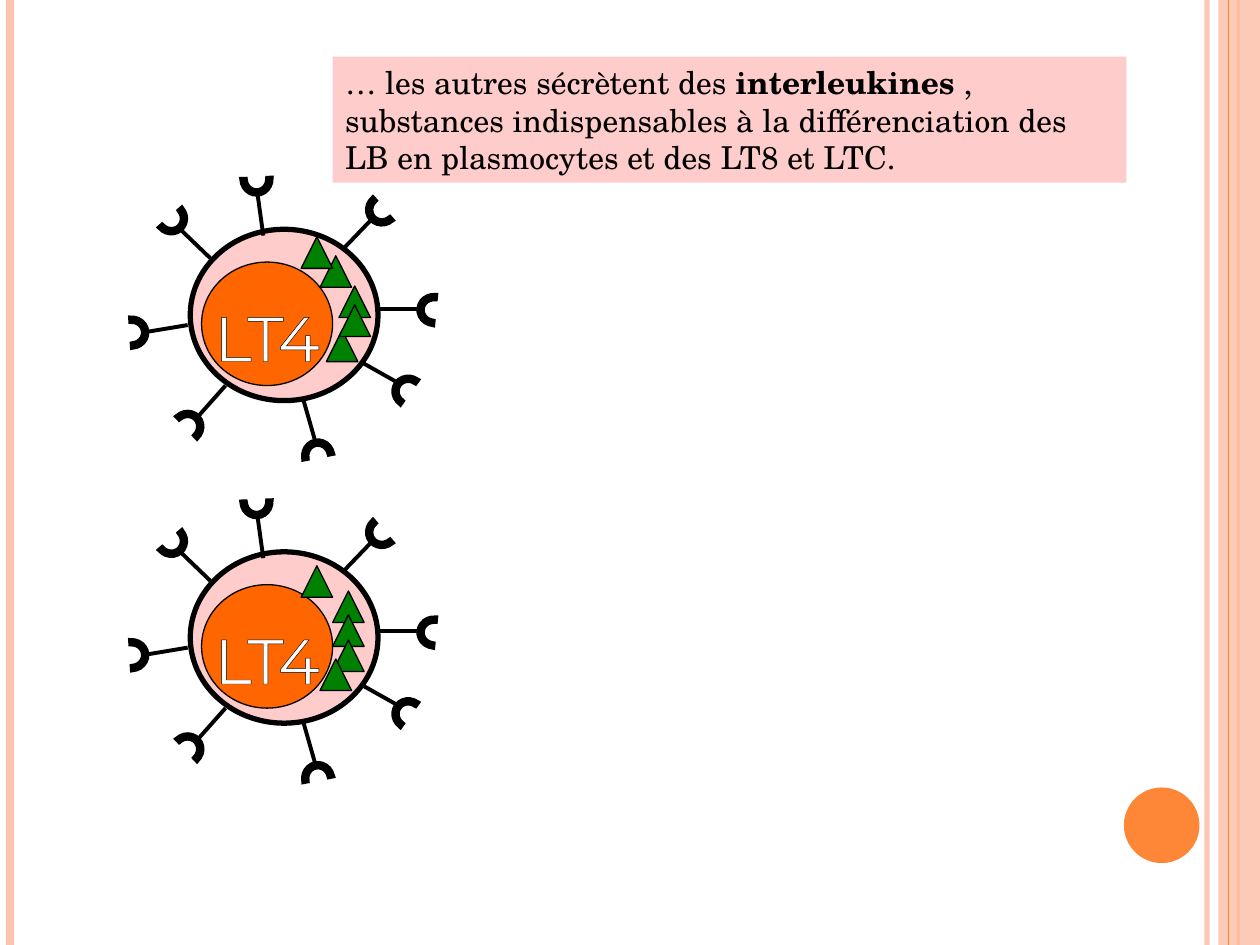
from lxml import etree
from pptx import Presentation
from pptx.dml.color import RGBColor
from pptx.enum.shapes import MSO_CONNECTOR, MSO_SHAPE
from pptx.enum.text import MSO_ANCHOR, PP_ALIGN
from pptx.oxml import parse_xml
from pptx.oxml.ns import nsdecls, qn
from pptx.util import Inches, Pt

PEACH, ORANGE = "FEC3AE", "FE8637"
PINK, NUCLEUS, GREEN = "FFCCCC", "FF6600", "008000"
BLACK, WHITE = "000000", "FFFFFF"
BODY_FONT, LABEL_FONT = "TeX Gyre Schola", "Montserrat"

# Stem start, stem end, top left of the receptor cup, rotation of the cup
RECEPTORS = [
    ((2.09, 1.87), (2.04, 1.51), (1.92, 1.30), 177.6),
    ((1.67, 2.05), (1.41, 1.80), (1.24, 1.61), 139.2),
    ((1.49, 2.58), (1.13, 2.64), (0.93, 2.52), 86.4),
    ((1.79, 3.06), (1.55, 3.33), (1.37, 3.27), 46.8),
    ((2.86, 2.87), (3.18, 3.05), (3.13, 2.99), 305.9),
    ((2.41, 3.18), (2.51, 3.53), (2.41, 3.50), 349),
    ((2.99, 2.45), (3.36, 2.45), (3.33, 2.34), 275.7),
    ((2.72, 1.98), (2.97, 1.72), (2.92, 1.54), 229.2),
]
CELL_OFFSETS = [0, 2.56]
INTERLEUKINS = [
    (2.54, 2.03), (2.69, 2.27), (2.59, 2.62), (2.39, 4.49), (2.64, 4.69),
    (2.64, 4.88), (2.64, 5.08), (2.54, 5.23), (2.69, 2.42), (2.39, 1.88),
]


def color(value):
    return RGBColor.from_string(value)


def set_opacity(fill_parent, percent):
    """Make the solid fill found below the element partly transparent."""
    color_element = fill_parent.find(".//" + qn("a:srgbClr"))
    alpha = etree.SubElement(color_element, qn("a:alpha"))
    alpha.set("val", str(percent * 1000))


class SlideBuilder:
    def __init__(self, slide):
        self.slide = slide
        self.shapes = slide.shapes

    def shape(self, kind, left, top, width, height, fill=None, line=None, weight=0.75):
        shape = self.shapes.add_shape(
            kind, Inches(left), Inches(top), Inches(width), Inches(height))
        shape.shadow.inherit = False
        if fill:
            shape.fill.solid()
            shape.fill.fore_color.rgb = color(fill)
        else:
            shape.fill.background()
        if line:
            shape.line.color.rgb = color(line)
            shape.line.width = Pt(weight)
        else:
            shape.line.fill.background()
        return shape

    def line(self, start, end, line_color, weight):
        connector = self.shapes.add_connector(
            MSO_CONNECTOR.STRAIGHT, *(Inches(value) for value in start + end))
        connector.line.color.rgb = color(line_color)
        connector.line.width = Pt(weight)
        etree.SubElement(connector._element.spPr, qn("a:effectLst"))
        return connector

    def vertical_line(self, x, line_color, weight):
        return self.line((x, 0), (x, 7.5), line_color, weight)

    def text(self, left, top, width, height, runs, font, size, text_color):
        """Add a text box with one paragraph of (text, bold) runs."""
        box = self.shapes.add_textbox(
            Inches(left), Inches(top), Inches(width), Inches(height))
        frame = box.text_frame
        frame.word_wrap = True
        frame.vertical_anchor = MSO_ANCHOR.TOP
        paragraph = frame.paragraphs[0]
        paragraph.font.name = font
        paragraph.font.size = Pt(size)
        paragraph.font.color.rgb = color(text_color)
        for content, bold in runs:
            run = paragraph.add_run()
            run.text = content
            run.font.bold = bold
        return box

    def outlined_label(self, left, top, width, height, content):
        box = self.text(left, top, width, height, [(content, None)],
                        LABEL_FONT, 36, WHITE)
        frame = box.text_frame
        frame.margin_left = frame.margin_right = 0
        paragraph = frame.paragraphs[0]
        paragraph.alignment = PP_ALIGN.CENTER
        outline = parse_xml(
            f'<a:ln {nsdecls("a")} w="{Pt(0.75)}"><a:solidFill>'
            f'<a:srgbClr val="{BLACK}"/></a:solidFill></a:ln>')
        paragraph.runs[0]._r.get_or_add_rPr().insert(0, outline)

    def receptor(self, start, end, corner, rotation, offset):
        self.line((start[0], start[1] + offset), (end[0], end[1] + offset), BLACK, 2.25)
        cup = self.shape(MSO_SHAPE.BLOCK_ARC, corner[0], corner[1] + offset,
                         0.23, 0.24, line=BLACK, weight=3)
        cup.adjustments[2] = 0.11
        cup.rotation = rotation
        miter = etree.SubElement(cup._element.spPr.find(qn("a:ln")), qn("a:miter"))
        miter.set("lim", "800000")

    def cell(self, offset):
        """Add one grouped LT4 cell, moved down by the offset."""
        self.shapes = self.slide.shapes.add_group_shape().shapes
        self.shape(MSO_SHAPE.OVAL, 1.51, 1.82 + offset, 1.49, 1.36, PINK, BLACK, 3)
        self.shape(MSO_SHAPE.OVAL, 1.6, 2.08 + offset, 1.04, 0.98, NUCLEUS, BLACK)
        for receptor in RECEPTORS:
            self.receptor(*receptor, offset)
        self.outlined_label(1.66, 2.32 + offset, 0.92, 0.36, "LT4")
        self.shapes = self.slide.shapes

    def decoration(self):
        edge = self.vertical_line(9.58, PEACH, 3)
        set_opacity(edge._element.spPr, 93)
        self.vertical_line(0.08, PEACH, 4.5)
        self.vertical_line(9.83, ORANGE, 1.5)
        band = self.shape(MSO_SHAPE.RECTANGLE, 9.67, 0, 0.33, 7.5, PEACH)
        set_opacity(band._element.spPr, 87)
        self.vertical_line(9.75, ORANGE, 0.75)
        self.shape(MSO_SHAPE.OVAL, 8.92, 6.25, 0.6, 0.6, ORANGE)


def main():
    presentation = Presentation()
    presentation.slide_width = Inches(10)
    presentation.slide_height = Inches(7.5)
    builder = SlideBuilder(presentation.slides.add_slide(presentation.slide_layouts[6]))

    builder.decoration()
    for offset in CELL_OFFSETS:
        builder.cell(offset)

    caption = builder.text(2.64, 0.45, 6.3, 1, [
        ("… les autres sécrètent des ", None),
        ("interleukines", True),
        (" , substances indispensables à la différenciation des LB en plasmocytes"
         " et des LT8 et LTC.", None),
    ], BODY_FONT, 18, BLACK)
    caption.fill.solid()
    caption.fill.fore_color.rgb = color(PINK)

    for left, top in INTERLEUKINS:
        builder.shape(MSO_SHAPE.ISOSCELES_TRIANGLE, left, top, 0.25, 0.25, GREEN, BLACK)

    presentation.save("out.pptx")


if __name__ == "__main__":
    main()
